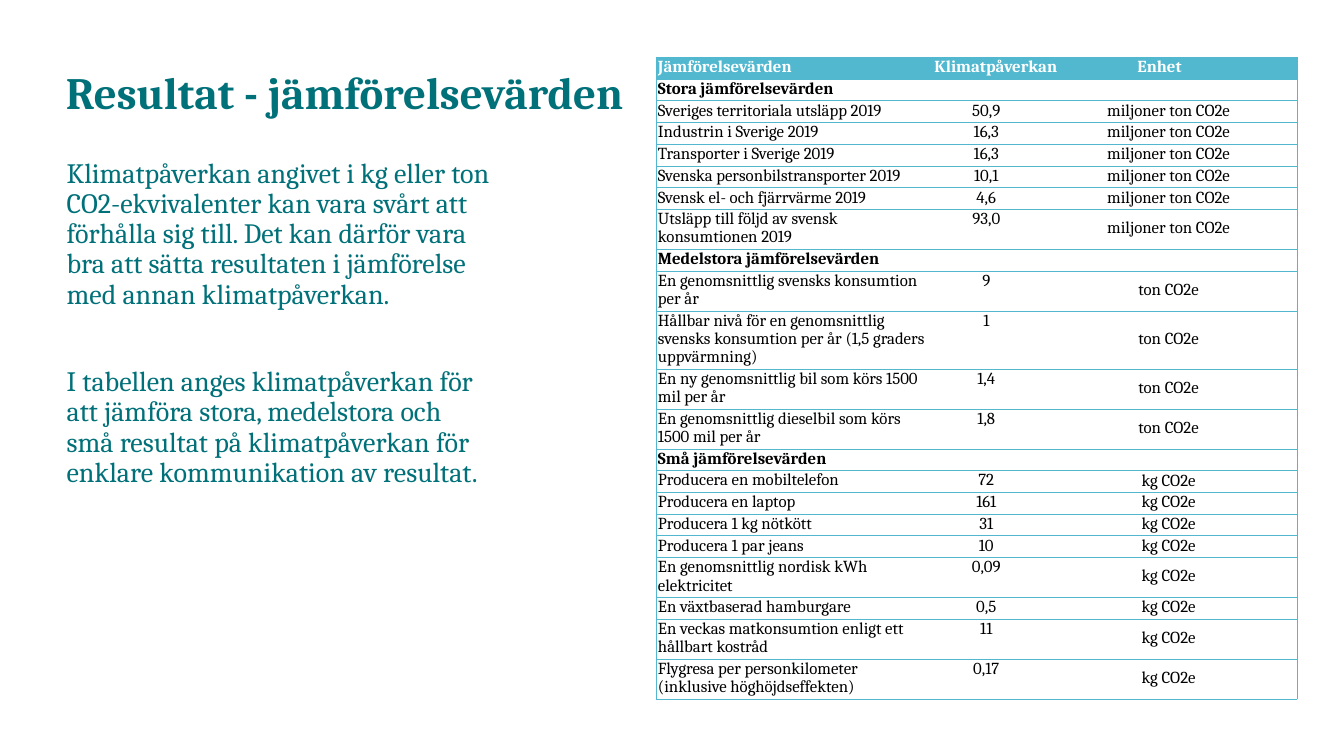
"""Builds the slide that lists reference values for climate impact."""
from dataclasses import dataclass

from lxml import etree
from pptx import Presentation
from pptx.dml.color import RGBColor
from pptx.enum.text import MSO_ANCHOR, PP_ALIGN
from pptx.oxml.ns import qn
from pptx.util import Pt

PX = 6350
MIDDLE, TOP = MSO_ANCHOR.MIDDLE, MSO_ANCHOR.TOP
LEFT, CENTER = PP_ALIGN.LEFT, PP_ALIGN.CENTER


@dataclass(frozen=True)
class Theme:
    font: str = "Cambria"
    heading: str = "007079"
    accent: str = "51B8CF"
    white: str = "FFFFFF"
    black: str = "000000"
    title_size: int = 32
    body_size: int = 20
    table_size: int = 12
    table_leading: int = 13
    paragraph_gap: int = 41
    border: float = 0.5


THEME = Theme()

TITLE = "Resultat - jämförelsevärden"
BODY = [
    "Klimatpåverkan angivet i kg eller ton CO2-ekvivalenter kan vara svårt att förhålla sig till. "
    "Det kan därför vara bra att sätta resultaten i jämförelse med annan klimatpåverkan.",
    "I tabellen anges klimatpåverkan för att jämföra stora, medelstora och små resultat på "
    "klimatpåverkan för enklare kommunikation av resultat.",
]
HEADER = ["Jämförelsevärden", "Klimatpåverkan", "Enhet"]
GROUPS = [
    ("Stora jämförelsevärden", "miljoner ton CO2e", [
        ("Sveriges territoriala utsläpp 2019", "50,9", 1),
        ("Industrin i Sverige 2019", "16,3", 1),
        ("Transporter i Sverige 2019", "16,3", 1),
        ("Svenska personbilstransporter 2019", "10,1", 1),
        ("Svensk el- och fjärrvärme 2019", "4,6", 1),
        ("Utsläpp till följd av svensk konsumtionen 2019", "93,0", 2),
    ]),
    ("Medelstora jämförelsevärden", "ton CO2e", [
        ("En genomsnittlig svensks konsumtion per år", "9", 2),
        ("Hållbar nivå för en genomsnittlig svensks konsumtion per år (1,5 graders uppvärmning)", "1", 3),
        ("En ny genomsnittlig bil som körs 1500 mil per år", "1,4", 2),
        ("En genomsnittlig dieselbil som körs 1500 mil per år", "1,8", 2),
    ]),
    ("Små jämförelsevärden", "kg CO2e", [
        ("Producera en mobiltelefon", "72", 1),
        ("Producera en laptop", "161", 1),
        ("Producera 1 kg nötkött", "31", 1),
        ("Producera 1 par jeans", "10", 1),
        ("En genomsnittlig nordisk kWh elektricitet", "0,09", 2),
        ("En växtbaserad hamburgare", "0,5", 1),
        ("En veckas matkonsumtion enligt ett hållbart kostråd", "11", 2),
        ("Flygresa per personkilometer (inklusive höghöjdseffekten)", "0,17", 2),
    ]),
]
COLUMN_WIDTHS = [395, 154, 136, 231]
LINE_HEIGHT, CELL_TOP, CELL_BOTTOM, CELL_SIDE = 26, 2, 3, 3


def write(text_frame, texts, size, color, bold=False, align=LEFT, spacing=0.9, gap=0):
    text_frame.word_wrap = True
    text_frame.text = "\n".join(texts)
    for index, paragraph in enumerate(text_frame.paragraphs):
        paragraph.alignment = align
        paragraph.line_spacing = spacing
        paragraph.space_before = Pt(gap if index else 0)
        for run in paragraph.runs:
            run.font.name = THEME.font
            run.font.size = Pt(size)
            run.font.bold = bold
            run.font.color.rgb = RGBColor.from_string(color)


def set_borders(cell, visible_sides):
    properties = cell._tc.get_or_add_tcPr()
    for position, side in enumerate("LRTB"):
        line = etree.Element(qn(f"a:ln{side}"), w=str(Pt(THEME.border)))
        if side in visible_sides:
            fill = etree.SubElement(line, qn("a:solidFill"))
            etree.SubElement(fill, qn("a:srgbClr"), val=THEME.accent)
        else:
            etree.SubElement(line, qn("a:noFill"))
        properties.insert(position, line)


presentation = Presentation()
presentation.slide_width = 1920 * PX
presentation.slide_height = 1080 * PX
slide = presentation.slides.add_slide(presentation.slide_layouts[6])

title_box = slide.shapes.add_textbox(80 * PX, 81 * PX, 840 * PX, 108 * PX)
title_box.text_frame.vertical_anchor = MIDDLE
write(title_box.text_frame, [TITLE], THEME.title_size, THEME.heading, bold=True)

body_box = slide.shapes.add_textbox(81 * PX, 220 * PX, 639 * PX, 671 * PX)
write(body_box.text_frame, BODY, THEME.body_size, THEME.heading, gap=THEME.paragraph_gap)

rows = [("header", HEADER, 1)]
for group_name, unit, entries in GROUPS:
    rows.append(("group", [group_name], 1))
    rows.extend(("entry", [label, value, unit], lines) for label, value, lines in entries)

heights = [lines * LINE_HEIGHT + CELL_TOP + CELL_BOTTOM for _, _, lines in rows]
table_frame = slide.shapes.add_table(
    len(rows), len(COLUMN_WIDTHS), 937 * PX, 82 * PX, sum(COLUMN_WIDTHS) * PX, sum(heights) * PX)
table = table_frame.table
table.first_row = False
table.horz_banding = False
for column, width in zip(table.columns, COLUMN_WIDTHS):
    column.width = width * PX

spans = {"header": (1, 2), "group": (0, 3), "entry": (2, 3)}
text_columns = {"header": (0, 1, 3), "group": (0,), "entry": (0, 1, 2)}
for row_index, (kind, texts, _) in enumerate(rows):
    table.rows[row_index].height = heights[row_index] * PX
    first, last = spans[kind]
    table.cell(row_index, first).merge(table.cell(row_index, last))
    text_by_column = dict(zip(text_columns[kind], texts))
    for column_index in range(len(COLUMN_WIDTHS)):
        cell = table.cell(row_index, column_index)
        cell.margin_left = cell.margin_right = CELL_SIDE * PX
        cell.margin_top = CELL_TOP * PX
        cell.margin_bottom = CELL_BOTTOM * PX
        cell.vertical_anchor = MIDDLE if kind == "header" or column_index == 2 else TOP
        if kind == "header":
            cell.fill.solid()
            cell.fill.fore_color.rgb = RGBColor.from_string(THEME.accent)
        else:
            cell.fill.background()
        left_side = "L" if column_index == 0 else ""
        right_side = "R" if column_index + cell.span_width == len(COLUMN_WIDTHS) else ""
        set_borders(cell, "TB" + left_side + right_side)
        if column_index in text_by_column:
            write(cell.text_frame, [text_by_column[column_index]], THEME.table_size,
                  THEME.white if kind == "header" else THEME.black,
                  bold=kind != "entry",
                  align=CENTER if kind == "entry" and column_index else LEFT,
                  spacing=Pt(THEME.table_leading))

presentation.save("out.pptx")
